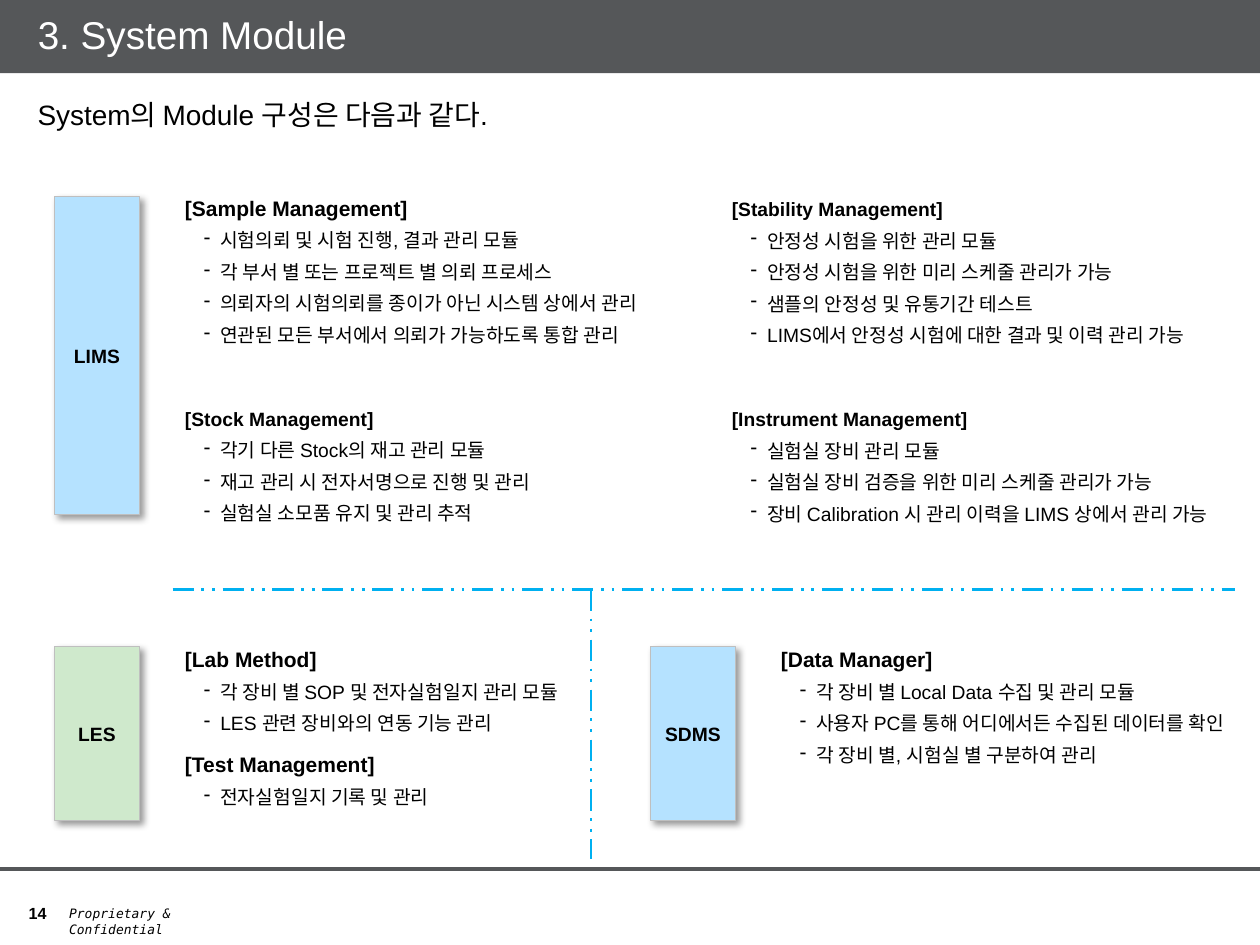
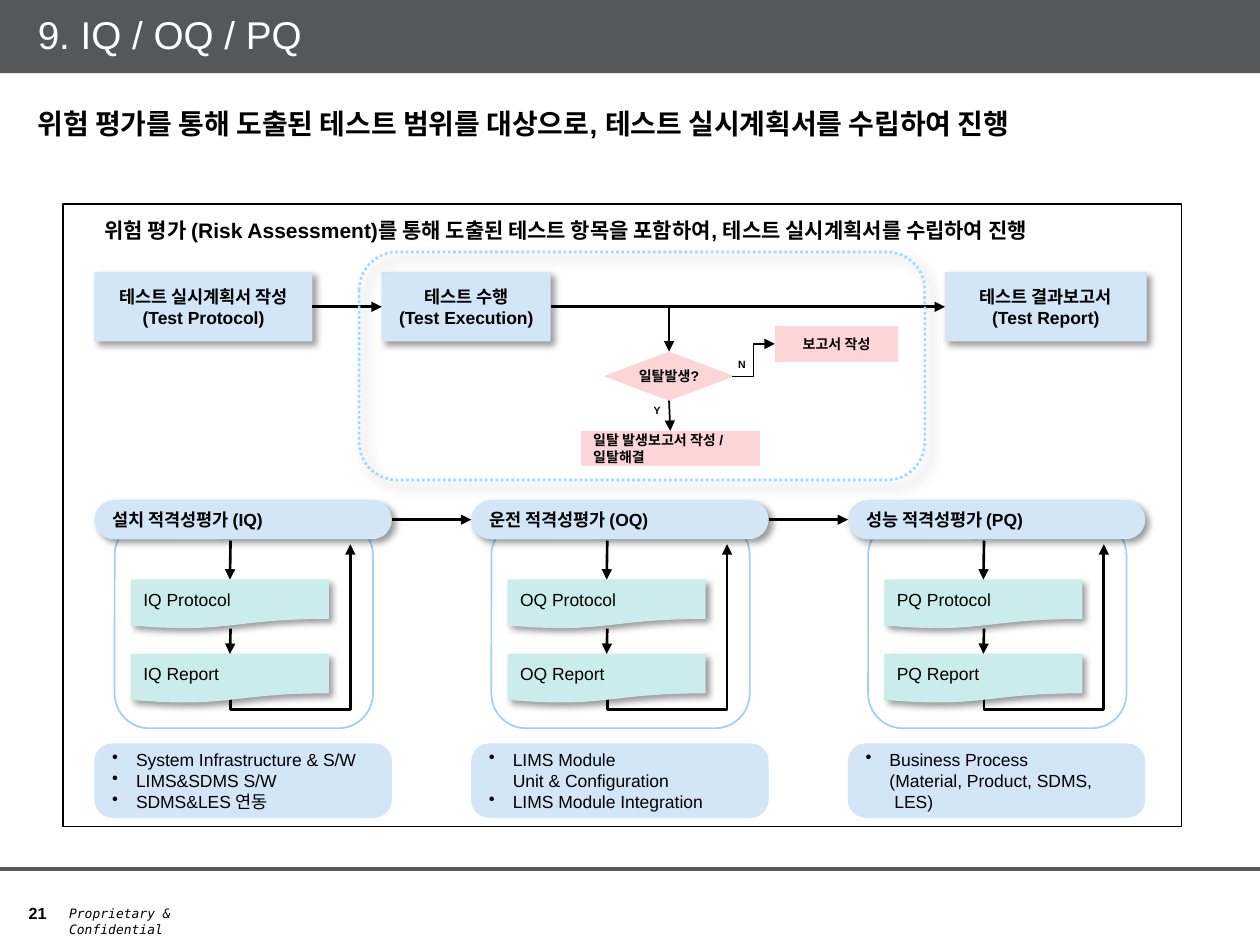
import copy
from dataclasses import dataclass, replace

import lxml.etree
import pptx
import pptx.dml.color
import pptx.enum.dml
import pptx.enum.shapes
import pptx.enum.text
import pptx.oxml.ns
import pptx.util
from pptx.util import Inches

SHAPE = pptx.enum.shapes.MSO_SHAPE
CONNECTOR = pptx.enum.shapes.MSO_CONNECTOR
ANCHOR = pptx.enum.text.MSO_ANCHOR
ALIGN = pptx.enum.text.PP_ALIGN
DASH = pptx.enum.dml.MSO_LINE
TOP, LEFT, BOTTOM, RIGHT = range(4)

BLACK, WHITE, GREY = "000000", "FFFFFF", "555759"
SKY, GREEN, DIVIDER = "B5E2FF", "CFE9CC", "00B0F0"
PALE_BLUE, PALE_TEAL, PALE_RED = "D2E6F7", "CAECEC", "FCD6D6"


@dataclass(frozen=True)
class Area:
    left: float
    top: float
    width: float
    height: float

    def lengths(self) -> list:
        return [Inches(n) for n in (self.left, self.top, self.width, self.height)]


@dataclass(frozen=True)
class TextStyle:
    size: float = 10
    bold: bool = False
    italic: bool = False
    color: str = BLACK
    font: str = "Arial"
    align: ALIGN = ALIGN.LEFT
    anchor: ANCHOR = ANCHOR.MIDDLE
    wrap: bool = True
    margins: tuple = (0.1, 0.05, 0.1, 0.05)
    line_spacing: object = None
    bullet: str = ""
    indent: float = 0
    hanging: float = 0


@dataclass(frozen=True)
class Look:
    fill: str = ""
    line: str = ""
    width: float = 1
    dash: object = None
    shadow: tuple = ()


@dataclass(frozen=True)
class Section:
    heading: str
    items: tuple
    size: float = 11
    space_before: float = 6


@dataclass(frozen=True)
class Module:
    name: str
    area: Area
    fill: str


@dataclass(frozen=True)
class Qualification:
    code: str
    name: str
    scope: tuple


SHADOW = (4, 3)  # blur and distance in points
BODY = TextStyle(anchor=ANCHOR.TOP)
LABEL = TextStyle(size=11, bold=True, align=ALIGN.CENTER, margins=(0.04, 0.05) * 2)
STEP = TextStyle(bold=True, align=ALIGN.CENTER)
SMALL = replace(STEP, size=8)
HEADING = replace(BODY, bold=True, line_spacing=pptx.util.Pt(18))
ITEM = replace(HEADING, size=11, bold=False, bullet="-", indent=0.28, hanging=0.13)
SCOPE = TextStyle(bullet="•", indent=0.19, hanging=0.19)


def rgb(color: str):
    return pptx.dml.color.RGBColor.from_string(color)


def add_xml(parent, tag: str, **attributes):
    return lxml.etree.SubElement(parent, pptx.oxml.ns.qn(tag), attributes)


def add_run(paragraph, text: str, style: TextStyle):
    run = paragraph.add_run()
    run.text = text
    run.font.name, run.font.size = style.font, pptx.util.Pt(style.size)
    run.font.bold, run.font.italic = style.bold, style.italic
    run.font.color.rgb = rgb(style.color)
    return run


def write_paragraph(paragraph, text: str, style: TextStyle) -> None:
    """Fill one paragraph; a newline in the text becomes a line break."""
    paragraph.alignment = style.align
    if style.line_spacing:
        paragraph.line_spacing = style.line_spacing
    if style.bullet:
        properties = paragraph._p.get_or_add_pPr()
        properties.set("marL", str(Inches(style.indent)))
        properties.set("indent", str(-Inches(style.hanging)))
        add_xml(properties, "a:buChar", char=style.bullet)
    run = None
    for line in text.split("\n"):
        if run is not None:
            paragraph.add_line_break()
            paragraph._p[-1].append(copy.deepcopy(run._r.rPr))
        run = add_run(paragraph, line, style)


def prepare_frame(shape, style: TextStyle):
    frame = shape.text_frame
    frame.word_wrap = style.wrap
    frame.vertical_anchor = style.anchor
    (frame.margin_left, frame.margin_top,
     frame.margin_right, frame.margin_bottom) = map(Inches, style.margins)
    return frame


def next_paragraph(frame, index: int):
    return frame.add_paragraph() if index else frame.paragraphs[0]


def write(shape, paragraphs: tuple, style: TextStyle) -> None:
    frame = prepare_frame(shape, style)
    for index, text in enumerate(paragraphs):
        write_paragraph(next_paragraph(frame, index), text, style)


def add_text(slide, area: Area, text: str, style: TextStyle) -> None:
    write(slide.shapes.add_textbox(*area.lengths()), (text,), style)


def add_box(slide, kind, area: Area, look: Look, paragraphs: tuple = (),
            style: TextStyle = STEP, corner: float | None = None):
    shape = slide.shapes.add_shape(kind, *area.lengths())
    shape.shadow.inherit = False
    if corner is not None:
        shape.adjustments[0] = corner
    if look.fill:
        shape.fill.solid()
        shape.fill.fore_color.rgb = rgb(look.fill)
    else:
        shape.fill.background()
    if look.line:
        set_line(shape, look.line, look.width, look.dash)
    else:
        shape.line.fill.background()
    if look.shadow:
        blur, distance = (str(pptx.util.Pt(n)) for n in look.shadow)
        effects = shape._element.spPr.find(pptx.oxml.ns.qn("a:effectLst"))
        outer = add_xml(effects, "a:outerShdw", blurRad=blur, dist=distance,
                        dir="2700000", algn="tl", rotWithShape="0")
        add_xml(add_xml(outer, "a:srgbClr", val=BLACK), "a:alpha", val="40000")
    if paragraphs:
        write(shape, paragraphs, style)
    return shape


def set_line(shape, color: str, width: float, dash=None) -> None:
    shape.line.color.rgb = rgb(color)
    shape.line.width = pptx.util.Pt(width)
    if dash:
        shape.line.dash_style = dash


def add_line(slide, start: tuple, end: tuple, color: str = BLACK, width: float = 1.5,
             dash=None, kind=CONNECTOR.STRAIGHT):
    connector = slide.shapes.add_connector(kind, *map(Inches, start + end))
    set_line(connector, color, width, dash)
    add_xml(connector._element.spPr, "a:effectLst")
    return connector


def add_arrow(slide, start: tuple = (0, 0), end: tuple = (0, 0), width: float = 1.5,
              source: tuple = (), target: tuple = (), kind=CONNECTOR.STRAIGHT):
    """Draw an arrow; source and target are (shape, side) pairs to join."""
    arrow = add_line(slide, start, end, width=width, kind=kind)
    add_xml(arrow.line._get_or_add_ln(), "a:tailEnd", type="triangle")
    if source:
        arrow.begin_connect(*source)
    if target:
        arrow.end_connect(*target)
    return arrow


def add_return_arrow(slide, left: float) -> None:
    """Elbow that leaves a report downwards and climbs back to its stage."""
    arrow = add_arrow(slide, (left + 1.15, 5.37), (left, 4.42), kind=CONNECTOR.ELBOW)
    properties = arrow._element.spPr
    properties.find(pptx.oxml.ns.qn("a:xfrm")).set("rot", "5400000")
    guides = properties.find(".//" + pptx.oxml.ns.qn("a:avLst"))
    add_xml(guides, "a:gd", name="adj1", fmla="val -13900")


def add_sections(slide, area: Area, sections: tuple) -> None:
    frame = prepare_frame(slide.shapes.add_textbox(*area.lengths()), HEADING)
    for index, section in enumerate(sections):
        paragraph = next_paragraph(frame, index)
        write_paragraph(paragraph, section.heading, replace(HEADING, size=section.size))
        if index:
            paragraph.space_before = pptx.util.Pt(section.space_before)
        for item in section.items:
            write_paragraph(frame.add_paragraph(), item, ITEM)


def new_slide(presentation, title: str, page: int):
    slide = presentation.slides.add_slide(presentation.slide_layouts[6])
    add_text(slide, Area(0.13, 6.98, 1.43, 0.39), str(page),
             TextStyle(size=9.2, bold=True, anchor=ANCHOR.BOTTOM))
    add_text(slide, Area(0.45, 7.14, 1.38, 0.23), "Proprietary & Confidential",
             replace(BODY, size=7.4, italic=True, font="DejaVu Sans Mono"))
    add_line(slide, (0, 6.9), (10, 6.9), GREY, 2.25)
    add_box(slide, SHAPE.RECTANGLE, Area(0, 0, 10, 0.58), Look(GREY), (title,),
            TextStyle(size=22.1, color=WHITE, line_spacing=0.95,
                      margins=(0.3, 0.05, 0.05, 0.05)))
    return slide


def build_modules(presentation) -> None:
    slide = new_slide(presentation, "3. System Module", 14)
    add_text(slide, Area(0.2, 0.8, 9.6, 0.3), "System의 Module 구성은 다음과 같다.",
             replace(BODY, size=16, line_spacing=pptx.util.Pt(14)))
    for module in (Module("LIMS", Area(0.43, 1.56, 0.68, 2.52), SKY),
                   Module("LES", Area(0.43, 5.13, 0.68, 1.38), GREEN),
                   Module("SDMS", Area(5.16, 5.13, 0.68, 1.38), SKY)):
        add_box(slide, SHAPE.RECTANGLE, module.area,
                Look(module.fill, "BFBFBF", 0.5, shadow=SHADOW), (module.name,), LABEL)
    add_sections(slide, Area(1.37, 1.45, 4.1, 3.13), (
        Section("[Sample Management]", (
            "시험의뢰 및 시험 진행, 결과 관리 모듈",
            "각 부서 별 또는 프로젝트 별 의뢰 프로세스",
            "의뢰자의 시험의뢰를 종이가 아닌 시스템 상에서 관리",
            "연관된 모든 부서에서 의뢰가 가능하도록 통합 관리"), size=12),
        Section("[Stock Management]", (
            "각기 다른 Stock의 재고 관리 모듈",
            "재고 관리 시 전자서명으로 진행 및 관리",
            "실험실 소모품 유지 및 관리 추적"), space_before=30)))
    add_sections(slide, Area(5.71, 1.45, 4.17, 2.79), (
        Section("[Stability Management]", (
            "안정성 시험을 위한 관리 모듈",
            "안정성 시험을 위한 미리 스케줄 관리가 가능",
            "샘플의 안정성 및 유통기간 테스트",
            "LIMS에서 안정성 시험에 대한 결과 및 이력 관리 가능")),
        Section("[Instrument Management]", (
            "실험실 장비 관리 모듈",
            "실험실 장비 검증을 위한 미리 스케줄 관리가 가능",
            "장비 Calibration 시 관리 이력을 LIMS 상에서 관리 가능"), space_before=30)))
    add_sections(slide, Area(1.37, 5.03, 3.4, 1.45), (
        Section("[Lab Method]", (
            "각 장비 별 SOP 및 전자실험일지 관리 모듈",
            "LES 관련 장비와의 연동 기능 관리"), size=12),
        Section("[Test Management]", ("전자실험일지 기록 및 관리",), size=12)))
    add_sections(slide, Area(6.1, 5.03, 3.9, 1.11), (
        Section("[Data Manager]", (
            "각 장비 별 Local Data 수집 및 관리 모듈",
            "사용자 PC를 통해 어디에서든 수집된 데이터를 확인",
            "각 장비 별, 시험실 별 구분하여 관리"), size=12),))
    for end in ((9.8, 4.68), (4.69, 6.82)):
        add_line(slide, (1.37 if end[1] == 4.68 else end[0], 4.68), end,
                 DIVIDER, dash=DASH.DASH_DOT_DOT)


def add_test_flow(slide) -> None:
    protocol, execution, report = [
        add_box(slide, SHAPE.RECTANGLE, Area(left, 2.16, width, 0.55),
                Look(PALE_BLUE, shadow=SHADOW), lines)
        for left, width, lines in (
            (0.75, 1.73, ("테스트 실시계획서 작성", "(Test Protocol)")),
            (3.03, 1.34, ("테스트 수행", "(Test Execution)")),
            (7.5, 1.6, ("테스트 결과보고서", "(Test Report)")))]
    resolution = add_box(slide, SHAPE.FLOWCHART_PROCESS, Area(4.61, 3.42, 1.42, 0.28),
                         Look(PALE_RED), ("일탈 발생보고서 작성 / 일탈해결",),
                         replace(SMALL, align=ALIGN.LEFT))
    add_box(slide, SHAPE.FLOWCHART_PROCESS, Area(6.15, 2.59, 0.98, 0.28),
            Look(PALE_RED), ("보고서 작성",), SMALL)
    deviation = add_box(slide, SHAPE.FLOWCHART_DECISION, Area(4.79, 2.79, 1.04, 0.39),
                        Look(PALE_RED), ("일탈발생?",),
                        replace(SMALL, wrap=False, margins=(0,) * 4))
    add_arrow(slide, source=(protocol, RIGHT), target=(execution, LEFT))
    add_arrow(slide, source=(execution, RIGHT), target=(report, LEFT))
    add_arrow(slide, (5.31, 2.43), width=1, target=(deviation, TOP))
    add_arrow(slide, width=1, source=(deviation, BOTTOM), target=(resolution, TOP))
    add_arrow(slide, (5.81, 2.99), (6.15, 2.73), width=1, kind=CONNECTOR.ELBOW)
    add_box(slide, SHAPE.ROUNDED_RECTANGLE, Area(2.85, 2, 4.49, 1.81),
            Look(line="9BD9FF", width=1.5, dash=DASH.ROUND_DOT, shadow=(7, 5)))
    answer = replace(BODY, size=6, bold=True, wrap=False)
    add_text(slide, Area(5.76, 2.79, 0.26, 0.2), "N", answer)
    add_text(slide, Area(5.09, 3.16, 0.26, 0.2), "Y", answer)


def add_qualification(slide, left: float, stage: Qualification):
    """Draw one column and return its heading pill."""
    add_box(slide, SHAPE.ROUNDED_RECTANGLE, Area(left + 0.16, 4.13, 2.05, 1.65),
            Look(WHITE, "A5CEEF"))
    pill = add_box(slide, SHAPE.ROUNDED_RECTANGLE, Area(left, 3.97, 2.36, 0.31),
                   Look(PALE_BLUE, shadow=SHADOW), (f"{stage.name} ({stage.code})",),
                   TextStyle(bold=True), corner=0.5)
    add_return_arrow(slide, left + 0.98)
    for name, top, arrow_top in (("Protocol", 4.6, 4.29), ("Report", 5.19, 4.99)):
        document = add_box(slide, SHAPE.FLOWCHART_DOCUMENT,
                           Area(left + 0.29, top, 1.57, 0.39),
                           Look(PALE_TEAL, shadow=SHADOW), (f"{stage.code} {name}",),
                           TextStyle())
        add_arrow(slide, (left + 1.08, arrow_top), target=(document, TOP))
    add_box(slide, SHAPE.ROUNDED_RECTANGLE, Area(left, 5.9, 2.36, 0.59),
            Look(PALE_BLUE), stage.scope, SCOPE, corner=0.24)
    return pill


def build_qualification(presentation) -> None:
    slide = new_slide(presentation, "9. IQ / OQ / PQ", 21)
    add_text(slide, Area(0.2, 0.8, 9.6, 0.37),
             "위험 평가를 통해 도출된 테스트 범위를 대상으로, 테스트 실시계획서를 수립하여 진행",
             replace(BODY, size=16, bold=True))
    add_box(slide, SHAPE.RECTANGLE, Area(0.5, 1.62, 8.88, 4.94), Look(line=BLACK, width=0.75))
    add_text(slide, Area(0.73, 1.68, 8.05, 0.3),
             "위험 평가 (Risk Assessment)를 통해 도출된 테스트 항목을 포함하여, "
             "테스트 실시계획서를 수립하여 진행", replace(BODY, size=12, bold=True))
    add_test_flow(slide)
    stages = (
        Qualification("IQ", "설치 적격성평가", (
            "System Infrastructure & S/W", "LIMS&SDMS S/W", "SDMS&LES 연동")),
        Qualification("OQ", "운전 적격성평가", (
            "LIMS Module\nUnit & Configuration", "LIMS Module Integration")),
        Qualification("PQ", "성능 적격성평가", (
            "Business Process\n(Material, Product, SDMS,\n LES)",)))
    pills = [add_qualification(slide, 0.75 + 2.99 * column, stage)
             for column, stage in enumerate(stages)]
    for previous, following in zip(pills, pills[1:]):
        add_arrow(slide, source=(previous, RIGHT), target=(following, LEFT))


def main() -> None:
    presentation = pptx.Presentation()
    presentation.slide_width, presentation.slide_height = Inches(10), Inches(7.5)
    build_modules(presentation)
    build_qualification(presentation)
    presentation.save("out.pptx")


if __name__ == "__main__":
    main()
